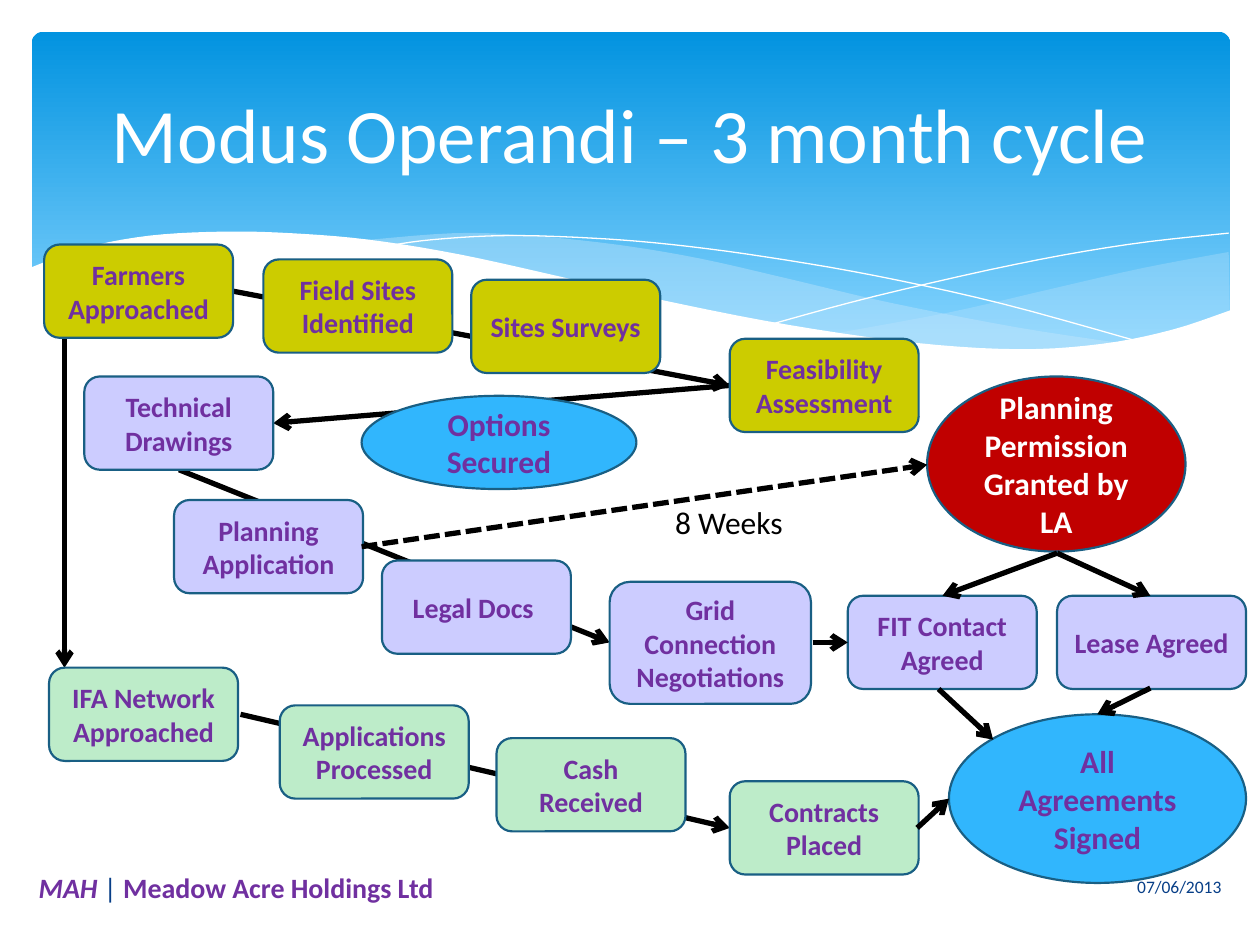
from lxml.etree import SubElement
from pptx import Presentation
from pptx.dml.color import RGBColor
from pptx.enum.dml import MSO_LINE
from pptx.enum.shapes import MSO_CONNECTOR, MSO_SHAPE
from pptx.enum.text import MSO_ANCHOR as ANCHOR, PP_ALIGN as ALIGN
from pptx.oxml.ns import qn
from pptx.util import Cm, Pt

FONT = "Calibri"
BLACK, WHITE, NAVY, PURPLE = "000000", "FFFFFF", "073E87", "7030A0"
OLIVE, LILAC, MINT, SKY, RED = "CCCC00", "CCCCFF", "BDECC9", "31B6FD", "C00000"
BOX_W, BOX_H = 3.81, 1.88

WAVES = [
    ([[(24.77, 5.08), (23.01, 5.41), (21.13, 5.84), (19.13, 6.3), (16.79, 6.73)],
      [(16.79, 6.73), (17.91, 6.88), (19.23, 7.01), (20.68, 7.06), (21.92, 6.99),
       (23.19, 6.78), (24.1, 6.53), (24.79, 6.27)]], "C6E7FC", 29),
    ([[(22.68, 6.93), (20.5, 6.6), (17.93, 6.1), (15.98, 5.64), (14.1, 5.21),
       (12.42, 4.93), (10.67, 4.75), (9.17, 4.7), (7.26, 4.85)],
      [(7.26, 4.85), (9.19, 5.16), (11.4, 5.64), (13.46, 6.1), (15.7, 6.55),
       (17.65, 6.86), (19.63, 7.04), (21.29, 7.06), (22.68, 6.93)]], "C6E7FC", 40),
    ([[(7.85, 4.95), (8.74, 4.83), (10.19, 4.75), (11.91, 4.8), (13.54, 4.93),
       (15.44, 5.18), (17.65, 5.56), (20.19, 6.12), (23.04, 6.91)]], None, 100),
    ([[(15.57, 6.53), (17.65, 5.97), (20.47, 5.33), (22.73, 4.93), (24.77, 4.7)]],
     None, 100),
    ([[(24.82, 6.25), (23.62, 6.65), (22.23, 6.93), (20.55, 7.04), (18.44, 6.91),
       (15.9, 6.55), (13.44, 6.07), (11.35, 5.59), (9.27, 5.13), (7.42, 4.83),
       (5.84, 4.7), (4.5, 4.67), (3.02, 4.75), (1.7, 5), (0.58, 5.41)],
      [(0.58, 8.36), (24.82, 8.36)]], WHITE, 100),
]

STEPS = [
    ("Field Sites Identified", 5.31, 5.23, OLIVE),
    ("Sites Surveys", 9.5, 5.64, OLIVE),
    ("Feasibility Assessment", 14.71, 6.83, OLIVE),
    ("Farmers Approached", 0.89, 4.93, OLIVE),
    ("Technical Drawings", 1.7, 7.59, LILAC),
    ("FIT Contact Agreed", 17.09, 12.01, LILAC),
    ("Planning Application", 3.51, 10.08, LILAC),
    ("Legal Docs ", 7.7, 11.3, LILAC),
    ("IFA Network Approached", 0.99, 13.46, MINT),
    ("Applications Processed", 5.64, 14.22, MINT),
    ("Cash Received", 10.01, 14.88, MINT),
    ("Contracts Placed", 14.71, 15.75, MINT),
    ("Lease Agreed", 21.31, 12.01, LILAC),
]

MILESTONES = [
    ("Planning Permission Granted by LA", 18.69, 7.59, 5.21, 3.53, RED, WHITE),
    ("All Agreements Signed", 19.13, 14.4, 5.99, 3.4, SKY, PURPLE),
    ("Options Secured", 7.29, 7.98, 5.54, 1.88, SKY, PURPLE),
]

ARROWS_BEHIND = [
    (1.3, 6.76, 1.3, 13.46),
    (4.85, 14.4, 14.71, 16.69),
    (3.61, 9.47, 12.29, 12.95),
    (4.7, 5.87, 14.71, 7.77),
    (14.71, 7.77, 5.51, 8.53),
]

ARROWS_IN_FRONT = [
    (21.31, 11.15, 23.19, 12.01),
    (21.31, 11.15, 19, 12.01),
    (18.92, 13.89, 20.02, 14.91),
    (18.49, 16.69, 19.13, 16.1),
    (23.19, 13.87, 22.12, 14.4),
    (16.38, 12.95, 17.09, 12.95),
]


def rgb(value):
    """Turn a hex string into a colour."""
    return RGBColor.from_string(value)


def smooth(points, steps=5):
    """Return a Catmull-Rom curve through the points."""
    if len(points) < 3:
        return points
    ext = [points[0], *points, points[-1]]
    curve = []
    for a, b, c, d in zip(ext, ext[1:], ext[2:], ext[3:]):
        for t in (i / steps for i in range(steps)):
            curve.append(tuple(
                (2 * q + (r - p) * t + (2 * p - 5 * q + 4 * r - s) * t ** 2
                 + (3 * q - p - 3 * r + s) * t ** 3) / 2
                for p, q, r, s in zip(a, b, c, d)))
    return curve + [points[-1]]


def add_wave(slide, runs, fill, opacity):
    """Draw a filled wave, or a white hairline when there is no fill."""
    pts = [(Cm(x), Cm(y)) for run in runs for x, y in smooth(run)]
    builder = slide.shapes.build_freeform(*pts[0])
    builder.add_line_segments(pts[1:], close=fill is not None)
    s = builder.convert_to_shape()
    s.shadow.inherit = False
    if fill is None:
        s.fill.background()
        s.line.color.rgb = rgb(WHITE)
        s.line.width = Pt(0)
        return
    s.fill.solid()
    s.fill.fore_color.rgb = rgb(fill)
    s.line.fill.background()
    if opacity < 100:
        color = s.fill._xPr.find(".//" + qn("a:srgbClr"))
        SubElement(color, qn("a:alpha"), val=str(opacity * 1000))


def add_banner(slide):
    """Draw the rounded gradient panel behind the title."""
    s = slide.shapes.add_shape(MSO_SHAPE.ROUNDED_RECTANGLE,
                               Cm(0.64), Cm(0.64), Cm(24.16), Cm(6.86))
    s.adjustments[0] = 0.034
    s.shadow.inherit = False
    s.line.fill.background()
    s.fill.gradient()
    s.fill.gradient_angle = 270
    stops = zip(s.fill.gradient_stops, (0, 0.9), ("0293E0", "83D3FE"))
    for stop, position, color in stops:
        stop.position = position
        stop.color.rgb = rgb(color)


def add_node(slide, kind, text, x, y, w, h, fill, color=PURPLE, size=16):
    """Draw an outlined shape with bold centred text."""
    s = slide.shapes.add_shape(kind, Cm(x), Cm(y), Cm(w), Cm(h))
    s.shadow.inherit = False
    s.fill.solid()
    s.fill.fore_color.rgb = rgb(fill)
    s.line.color.rgb = rgb("195F84")
    s.line.width = Pt(1.25)
    tf = s.text_frame
    tf.text = text
    tf.vertical_anchor = ANCHOR.MIDDLE
    for p in tf.paragraphs:
        p.alignment = ALIGN.CENTER
        style(p.font, size, color, True)


def add_arrow(slide, x1, y1, x2, y2, dashed=False):
    """Draw a thick black line with an open arrowhead at its end."""
    c = slide.shapes.add_connector(MSO_CONNECTOR.STRAIGHT,
                                   Cm(x1), Cm(y1), Cm(x2), Cm(y2))
    c.line.color.rgb = rgb(BLACK)
    c.line.width = Pt(3)
    if dashed:
        c.line.dash_style = MSO_LINE.SQUARE_DOT
    SubElement(c.line._get_or_add_ln(), qn("a:tailEnd"), type="arrow")
    SubElement(c._element.spPr, qn("a:effectLst"))


def style(font, size, color, bold=False, italic=False):
    """Set the look of a font."""
    font.name, font.size = FONT, Pt(size)
    font.bold, font.italic = bold, italic
    font.color.rgb = rgb(color)


def add_label(slide, x, y, w, runs, size, align=ALIGN.LEFT, anchor=ANCHOR.MIDDLE):
    """Add a one-line text box from (text, colour, bold, italic) runs."""
    tf = slide.shapes.add_textbox(Cm(x), Cm(y), Cm(w), Cm(1.02)).text_frame
    tf.word_wrap = True
    tf.vertical_anchor = anchor
    p = tf.paragraphs[0]
    p.alignment = align
    for text, *look in runs:
        r = p.add_run()
        r.text = text
        style(r.font, size, *look)


def set_title(slide, text):
    """Place and format the title."""
    s = slide.shapes.title
    s.left, s.top, s.width, s.height = Cm(1.27), Cm(0.94), Cm(22.86), Cm(3.48)
    s.text_frame.text = text
    s.text_frame.vertical_anchor = ANCHOR.MIDDLE
    p = s.text_frame.paragraphs[0]
    p.alignment = ALIGN.CENTER
    style(p.font, 44, WHITE)


def main():
    """Build the slide and save it."""
    prs = Presentation()
    prs.slide_width, prs.slide_height = Cm(25.4), Cm(19.05)
    slide = prs.slides.add_slide(prs.slide_layouts[5])
    add_banner(slide)
    for wave in WAVES:
        add_wave(slide, *wave)
    title = slide.shapes.title._element
    title.getparent().append(title)
    set_title(slide, "Modus Operandi – 3 month cycle")
    for arrow in ARROWS_BEHIND:
        add_arrow(slide, *arrow)
    for text, x, y, fill in STEPS:
        add_node(slide, MSO_SHAPE.ROUNDED_RECTANGLE, text, x, y, BOX_W, BOX_H, fill)
    add_node(slide, MSO_SHAPE.ROUNDED_RECTANGLE, "Grid Connection\nNegotiations",
             12.29, 11.73, 4.06, 2.46, LILAC)
    for milestone in MILESTONES:
        add_node(slide, MSO_SHAPE.OVAL, *milestone, size=18)
    for arrow in ARROWS_IN_FRONT:
        add_arrow(slide, *arrow)
    add_arrow(slide, 7.29, 11.02, 18.69, 9.37, dashed=True)
    add_label(slide, 13.36, 10.01, 2.79, [("8 Weeks", BLACK)], 18, anchor=ANCHOR.TOP)
    add_label(slide, 14.35, 17.37, 10.52, [("07/06/2013", NAVY)], 10, ALIGN.RIGHT)
    add_label(slide, 0.53, 17.37, 10.52,
              [("MAH ", PURPLE, True, True), ("| ", NAVY),
               ("Meadow Acre Holdings Ltd", PURPLE, True)], 16)
    prs.save("out.pptx")


if __name__ == "__main__":
    main()
